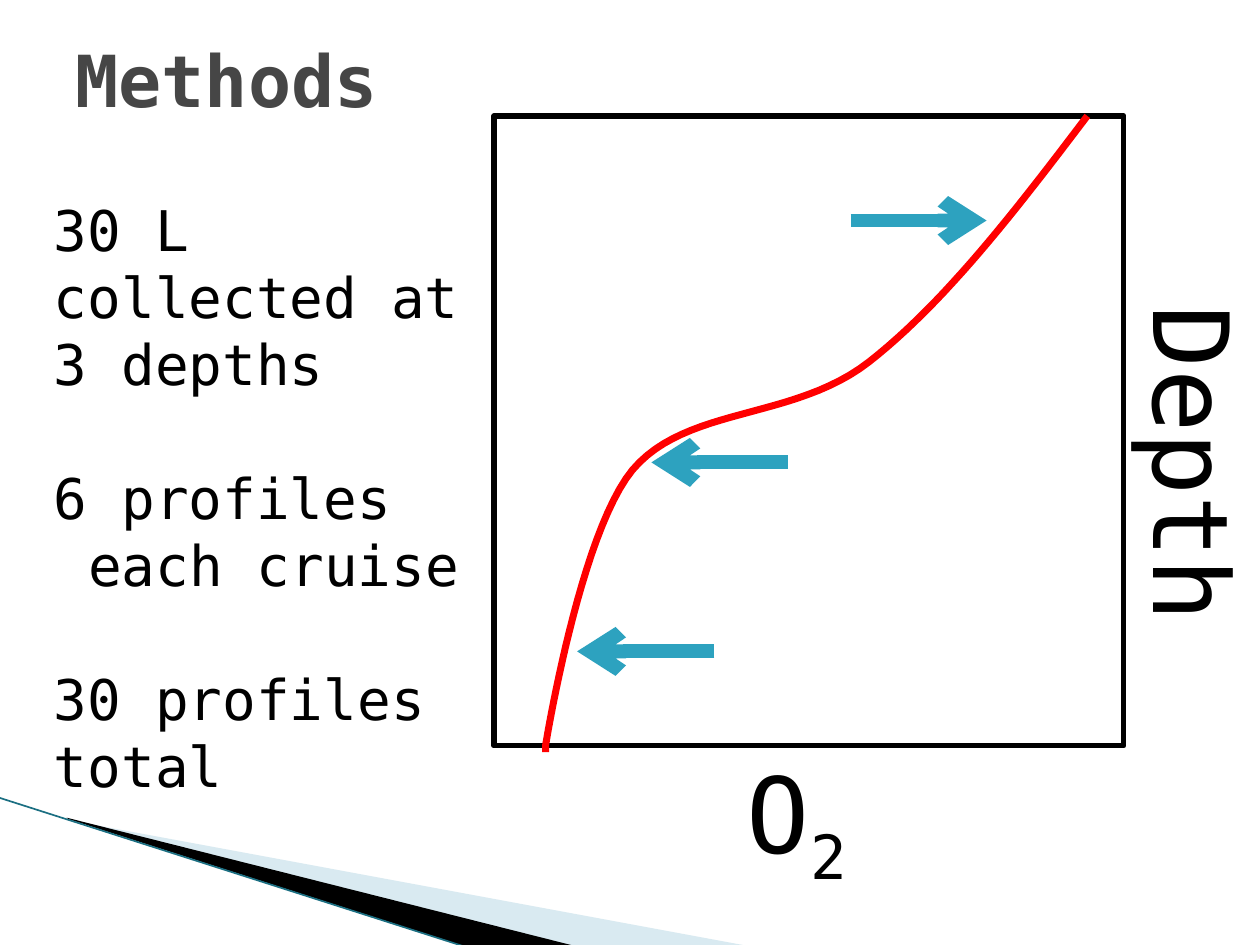
from dataclasses import dataclass

import lxml.etree
import pptx
import pptx.dml.color
import pptx.enum.shapes
import pptx.enum.text
import pptx.oxml.ns
import pptx.util

Inches = pptx.util.Inches
Pt = pptx.util.Pt
Anchor = pptx.enum.text.MSO_ANCHOR
Fit = pptx.enum.text.MSO_AUTO_SIZE


@dataclass(frozen=True)
class Theme:
    font: str = "DejaVu Sans Mono"
    ink: str = "000000"
    head: str = "464646"
    pale: str = "A0CBDC"
    edge: str = "1B6F82"
    curve: str = "FF0000"
    arrow: str = "2DA2BF"
    title: int = 41
    body: int = 32
    axis: int = 60


THEME = Theme()


def rgb(code):
    return pptx.dml.color.RGBColor.from_string(code)


def add_node(parent, tag, **attrs):
    lxml.etree.SubElement(parent, pptx.oxml.ns.qn(tag), attrs)


def add_path(slide, points, closed):
    start, *rest = [(Inches(x), Inches(y)) for x, y in points]
    pen = slide.shapes.build_freeform(*start, scale=1.0)
    pen.add_line_segments(rest, close=closed)
    shape = pen.convert_to_shape()
    shape.shadow.inherit = False
    return shape


def add_wedge(slide, points, color, alpha=None):
    shape = add_path(slide, points, True)
    shape.line.fill.background()
    shape.fill.solid()
    shape.fill.fore_color.rgb = rgb(color)
    if alpha:
        tint = shape._element.spPr.find(
            pptx.oxml.ns.qn("a:solidFill") + "/" + pptx.oxml.ns.qn("a:srgbClr"))
        add_node(tint, "a:alpha", val=str(alpha * 1000))


def bezier(a, b, c, d, steps=24):
    """Points along a cubic curve, leaving out its start."""
    for i in range(1, steps + 1):
        t = i / steps
        u = 1 - t
        yield tuple(u**3 * p + 3 * u * u * t * q + 3 * u * t * t * r + t**3 * s
                    for p, q, r, s in zip(a, b, c, d))


def add_curve(slide, knots, end):
    points = [knots[0]]
    for i in range(0, len(knots) - 1, 3):
        points.extend(bezier(*knots[i:i + 4]))
    shape = add_path(slide, points + [end], False)
    shape.fill.background()
    shape.line.color.rgb = rgb(THEME.curve)
    shape.line.width = Pt(4)


def add_line(slide, start, end, color, width, arrow=False):
    line = slide.shapes.add_connector(
        pptx.enum.shapes.MSO_CONNECTOR.STRAIGHT,
        *[Inches(v) for v in (*start, *end)])
    line.line.color.rgb = rgb(color)
    line.line.width = Pt(width)
    props = line._element.spPr
    if arrow:
        add_node(props.find(pptx.oxml.ns.qn("a:ln")), "a:tailEnd", type="arrow")
    add_node(props, "a:effectLst")


def add_frame(slide, box):
    shape = slide.shapes.add_shape(
        pptx.enum.shapes.MSO_SHAPE.RECTANGLE, *[Inches(v) for v in box])
    shape.shadow.inherit = False
    shape.fill.background()
    shape.line.color.rgb = rgb(THEME.ink)
    shape.line.width = Pt(3)


def add_box(slide, box, wrap=True, fit=Fit.SHAPE_TO_FIT_TEXT):
    frame = slide.shapes.add_textbox(*[Inches(v) for v in box]).text_frame
    frame.word_wrap = wrap
    frame.auto_size = fit
    return frame


def add_run(para, text, size, color=THEME.ink, bold=False):
    run = para.add_run()
    run.text = text
    run.font.name = THEME.font
    run.font.size = Pt(size)
    run.font.bold = bold
    run.font.color.rgb = rgb(color)
    return run


def add_title(slide, text):
    frame = add_box(slide, (0.5, 0, 9, 1.25), fit=Fit.NONE)
    frame.vertical_anchor = Anchor.MIDDLE
    add_run(frame.paragraphs[0], text, THEME.title, THEME.head, True)


def add_notes(slide, box, texts):
    """Body lines, set one blank line apart, each with its own hang."""
    frame = add_box(slide, box)
    for i, (text, hang) in enumerate(texts):
        para = frame.add_paragraph() if i else frame.paragraphs[0]
        if i:
            para.space_before = Pt(38)
        if hang:
            props = para._p.get_or_add_pPr()
            props.set("marL", str(Inches(hang)))
            props.set("indent", str(-Inches(hang)))
        add_run(para, text, THEME.body)


def add_axes(slide):
    para = add_box(slide, (5.83, 5.89, 1.04, 1.11), False).paragraphs[0]
    add_run(para, "O", THEME.axis)
    sub = add_run(para, "2", THEME.axis)
    sub.font._element.set("baseline", "-25000")

    frame = add_box(slide, (8.83, 2.33, 1.21, 2.2), False)
    frame._txBody.bodyPr.set("vert", "vert")
    add_run(frame.paragraphs[0], "Depth", THEME.axis)


def main():
    deck = pptx.Presentation()
    deck.slide_width, deck.slide_height = Inches(10), Inches(7.5)
    slide = deck.slides.add_slide(deck.slide_layouts[6])

    add_wedge(slide, [(0.55, 6.51), (5.95, 7.51), (4.56, 7.51), (0.55, 6.5)],
              THEME.pale, 40)
    add_wedge(slide, [(0.53, 6.49), (4.57, 7.51), (3.72, 7.52), (0.54, 6.5)],
              THEME.ink)
    add_line(slide, (-0.01, 6.33), (3.71, 7.52), THEME.edge, 0.95)

    add_title(slide, "Methods")
    add_frame(slide, (3.92, 0.92, 5, 5))
    add_curve(slide, [(8.63, 0.92), (8.07, 1.66), (7.5, 2.4), (6.9, 2.87),
                      (6.3, 3.34), (5.45, 3.22), (5.02, 3.73),
                      (4.6, 4.24), (4.33, 5.92), (4.33, 5.92)], (4.33, 5.97))
    for tail, tip, y in [(6.75, 7.83, 1.75), (5.67, 4.58, 5.17),
                         (6.25, 5.17, 3.67)]:
        add_line(slide, (tail, y), (tip, y), THEME.arrow, 8, True)
    add_axes(slide)
    add_notes(slide, (0.33, 1.5, 3.58, 4.41),
              [("30 L collected at 3 depths", 0),
               ("6 profiles each cruise", 0.27),
               ("30 profiles total", 0)])
    deck.save("out.pptx")


if __name__ == "__main__":
    main()
